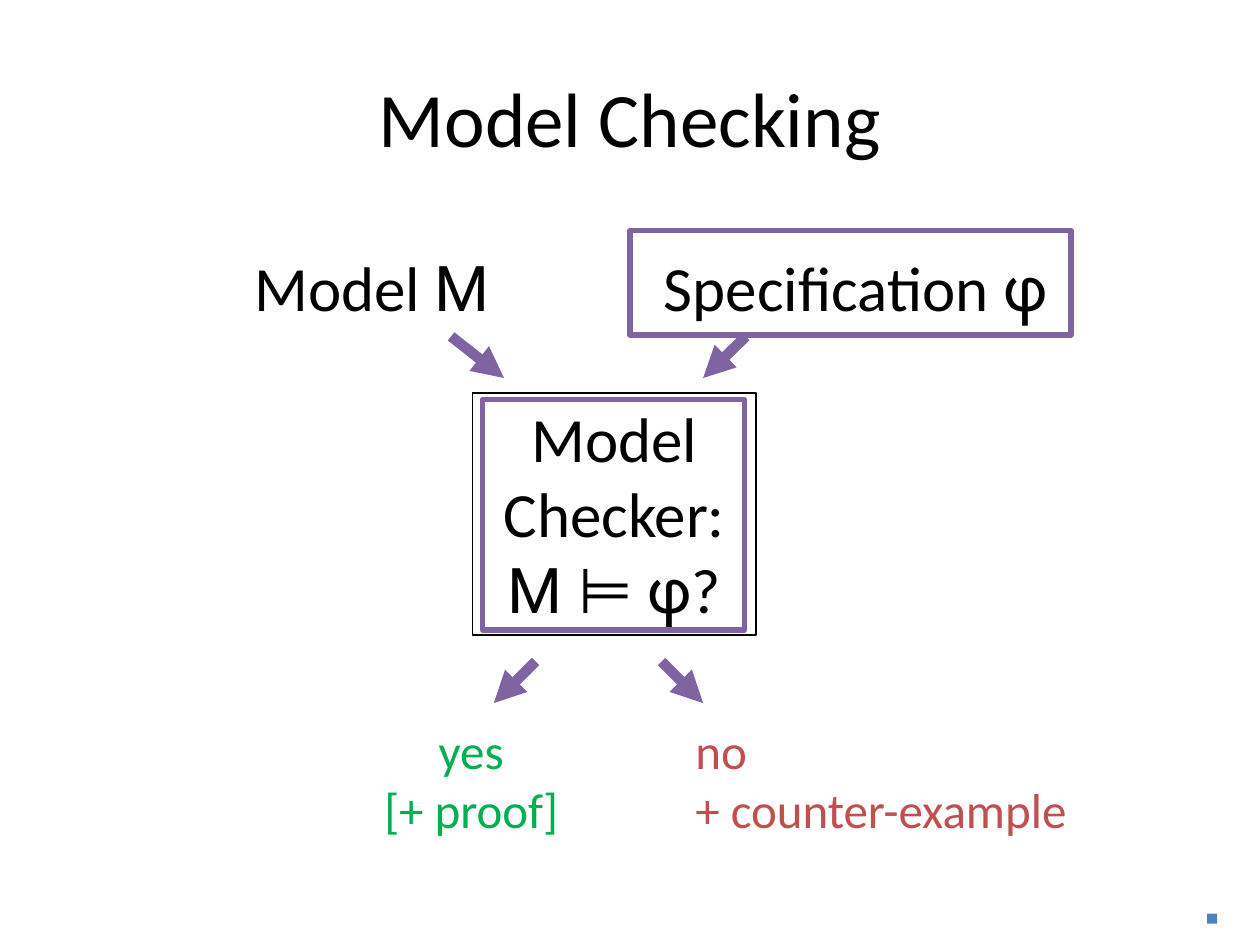
from pptx import Presentation
from pptx.dml.color import RGBColor
from pptx.enum.shapes import MSO_CONNECTOR, MSO_SHAPE
from pptx.enum.text import MSO_ANCHOR, PP_ALIGN
from pptx.oxml.ns import qn
from pptx.util import Inches, Pt
from lxml.etree import SubElement

BLACK, PURPLE, GREEN, RED, BLUE = "000000", "8064A2", "00B050", "C0504D", "4F81BD"


def color(value):
    return RGBColor.from_string(value)


def write(shape, lines, size, text_color, align, wrap=False):
    frame = shape.text_frame
    frame.word_wrap = wrap
    frame.text = "\n".join("".join(line) for line in lines)
    for paragraph, line in zip(frame.paragraphs, lines):
        paragraph.text = ""
        paragraph.alignment = align
        for text in line:
            run = paragraph.add_run()
            run.text = text
            run.font.name = "Roboto" if text in ("M", "M ", "φ") else "Calibri"
            run.font.size = Pt(size)
            run.font.color.rgb = color(text_color)


presentation = Presentation()
presentation.slide_width = Inches(10)
presentation.slide_height = Inches(7.5)
slide = presentation.slides.add_slide(presentation.slide_layouts[6])

title = slide.shapes.add_textbox(Inches(0.5), Inches(0.3), Inches(9), Inches(1.25))
title.text_frame.vertical_anchor = MSO_ANCHOR.MIDDLE
write(title, [["Model Checking"]], 44, BLACK, PP_ALIGN.CENTER, wrap=True)

labels = [
    (1.92, 1.92, 2.07, 0.71, [["Model ", "M"]], 36, BLACK, PP_ALIGN.LEFT),
    (5.17, 1.92, 3.25, 0.71, [["Specification ", "φ"]], 36, BLACK, PP_ALIGN.LEFT),
    (2.92, 5.67, 1.64, 1.03, [["yes"], ["[+ proof]"]], 28, GREEN, PP_ALIGN.CENTER),
    (5.42, 5.67, 3.19, 1.04, [["no"], ["+ counter-example"]], 28, RED, PP_ALIGN.LEFT),
]
for left, top, width, height, lines, size, text_color, align in labels:
    label = slide.shapes.add_textbox(Inches(left), Inches(top), Inches(width), Inches(height))
    write(label, lines, size, text_color, align)

arrows = [
    (3.58, 2.67, 4, 3),
    (5.92, 2.67, 5.58, 3),
    (4.25, 5.25, 3.92, 5.58),
    (5.25, 5.25, 5.58, 5.58),
]
for arrow in arrows:
    connector = slide.shapes.add_connector(MSO_CONNECTOR.STRAIGHT, *map(Inches, arrow))
    connector.line.color.rgb = color(PURPLE)
    connector.line.width = Pt(6)
    SubElement(connector.line._get_or_add_ln(), qn("a:tailEnd"), type="triangle")
    SubElement(connector._element.spPr, qn("a:effectLst"))

checker_lines = [["Model"], ["Checker:"], ["M ", "⊨ ", "φ", "?"]]
boxes = [
    (3.75, 3.12, 2.25, 1.92, None, BLACK, 0.75, checker_lines),
    (9.58, 7.25, 0.08, 0.08, BLUE, None, 0, None),
    (5, 1.83, 3.5, 0.83, None, PURPLE, 3, None),
    (3.83, 3.17, 2.08, 1.83, None, PURPLE, 3, None),
]
for left, top, width, height, fill, line_color, line_width, lines in boxes:
    box = slide.shapes.add_shape(
        MSO_SHAPE.RECTANGLE, Inches(left), Inches(top), Inches(width), Inches(height)
    )
    box.shadow.inherit = False
    if fill:
        box.fill.solid()
        box.fill.fore_color.rgb = color(fill)
    else:
        box.fill.background()
    if line_color:
        box.line.color.rgb = color(line_color)
        box.line.width = Pt(line_width)
    else:
        box.line.fill.background()
    if lines:
        box.text_frame.vertical_anchor = MSO_ANCHOR.TOP
        write(box, lines, 36, BLACK, PP_ALIGN.CENTER, wrap=True)

presentation.save("out.pptx")
